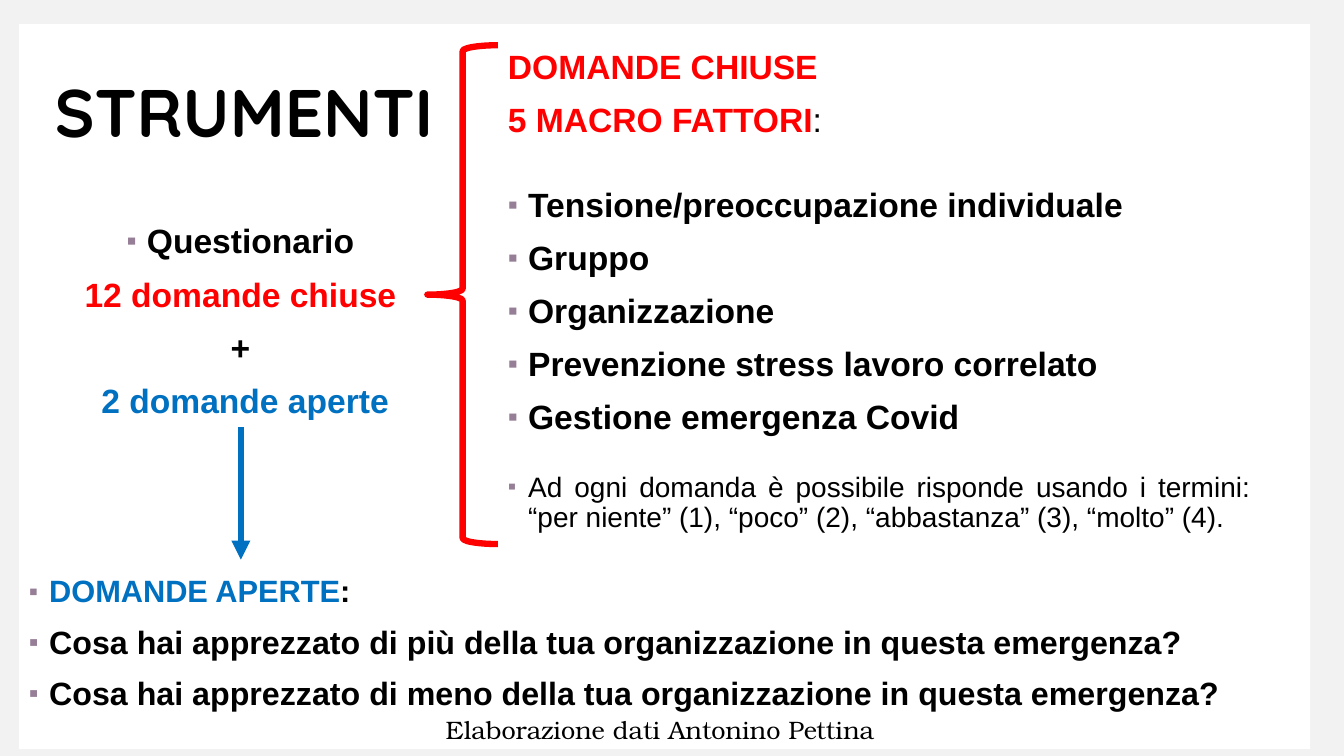
from lxml import etree
from pptx import Presentation
from pptx.dml.color import RGBColor
from pptx.enum.shapes import MSO_CONNECTOR, MSO_SHAPE
from pptx.enum.text import MSO_ANCHOR, MSO_AUTO_SIZE, PP_ALIGN
from pptx.oxml.ns import qn
from pptx.util import Cm, Pt

RECT, BRACE = MSO_SHAPE.RECTANGLE, MSO_SHAPE.LEFT_BRACE
LINE = MSO_CONNECTOR.STRAIGHT
TOP, MIDDLE = MSO_ANCHOR.TOP, MSO_ANCHOR.MIDDLE
LEFT, CENTER, JUSTIFY = PP_ALIGN.LEFT, PP_ALIGN.CENTER, PP_ALIGN.JUSTIFY
NO_FIT, GROW = MSO_AUTO_SIZE.NONE, MSO_AUTO_SIZE.SHAPE_TO_FIT_TEXT

BLACK, WHITE, GREY = "000000", "FFFFFF", "F2F2F2"
RED, BLUE, MAUVE = "FF0000", "0070C0", "967E96"


def rgb(code):
    return RGBColor.from_string(code)


class Deck:
    font = "Arial"
    thick = Pt(4.5)

    def __init__(self):
        self.prs = Presentation()
        self.prs.slide_width, self.prs.slide_height = Cm(33.87), Cm(19.05)
        self.slide = self.prs.slides.add_slide(self.prs.slide_layouts[5])
        self.shapes = self.slide.shapes
        back = self.slide.background.fill
        back.solid()
        back.fore_color.rgb = rgb(GREY)

    def style(self, run, size, color, bold=True, font=None):
        run.font.name = font or self.font
        run.font.size = Pt(size)
        run.font.bold = bold
        run.font.color.rgb = rgb(color)

    def title(self, text, *place):
        head = self.shapes.title
        head.left, head.top, head.width, head.height = map(Cm, place)
        frame = head.text_frame
        frame.text = text
        frame.auto_size = NO_FIT
        frame.vertical_anchor = MIDDLE
        par = frame.paragraphs[0]
        par.alignment, par.line_spacing = LEFT, 0.9
        self.style(par.runs[0], 48, BLACK, font="Quicksand")

    def box(self, *place, anchor=TOP):
        """Add a plain white panel."""
        shape = self.shapes.add_shape(RECT, *map(Cm, place))
        shape.shadow.inherit = False
        shape.fill.solid()
        shape.fill.fore_color.rgb = rgb(WHITE)
        shape.line.fill.background()
        shape.text_frame.vertical_anchor = anchor
        return shape

    def indent(self, par, left, hang=0):
        props = par._p.get_or_add_pPr()
        props.set("marL", str(Cm(left)))
        props.set("indent", str(Cm(-hang)))
        return props

    def bullet(self, par):
        props = self.indent(par, 0.51, 0.51)
        color = etree.SubElement(props, qn("a:buClr"))
        etree.SubElement(color, qn("a:srgbClr"), val=MAUVE)
        etree.SubElement(props, qn("a:buSzPct"), val="85000")
        etree.SubElement(props, qn("a:buFont"), typeface=self.font)
        etree.SubElement(props, qn("a:buChar"), char="▪")

    def para(self, shape, *runs, align=LEFT, mark=True, gap=12):
        """Add a paragraph; each run is (text, size, color[, bold])."""
        frame = shape.text_frame
        first = not frame.text
        par = frame.paragraphs[0] if first else frame.add_paragraph()
        if mark:
            self.bullet(par)
        par.alignment, par.line_spacing = align, 0.9
        par.space_before = Pt(0 if first else gap)
        for text, *look in runs:
            run = par.add_run()
            run.text = text
            self.style(run, *look)
        return par

    def brace(self, *place):
        shape = self.shapes.add_shape(BRACE, *map(Cm, place))
        shape.shadow.inherit = False
        shape.fill.background()
        shape.line.color.rgb = rgb(RED)
        shape.line.width = self.thick

    def arrow(self, *ends):
        link = self.shapes.add_connector(LINE, *map(Cm, ends))
        link.line.color.rgb = rgb(BLUE)
        link.line.width = self.thick
        etree.SubElement(link.line._get_or_add_ln(), qn("a:tailEnd"),
                         type="triangle")
        etree.SubElement(link._element.spPr, qn("a:effectLst"))

    def note(self, text, *place):
        frame = self.shapes.add_textbox(*map(Cm, place)).text_frame
        frame.word_wrap = True
        frame.auto_size = GROW
        frame.text = text
        par = frame.paragraphs[0]
        par.alignment = CENTER
        self.style(par.runs[0], 18, BLACK, False, "TeX Gyre Bonum")


def main():
    deck = Deck()
    panel = deck.box(0.48, 0.61, 32.54, 16.28)
    deck.shapes._spTree.insert(2, panel._element)
    deck.title("STRUMENTI", 1.12, 1.8, 27.94, 2.21)

    form = deck.box(0.79, 5.16, 10.54, 5.94, anchor=MIDDLE)
    deck.para(form, ("Questionario", 24, BLACK), align=CENTER)
    for text, color in (("12 domande chiuse", RED), ("+", BLACK),
                        ("2 domande aperte", BLUE)):
        last = deck.para(form, (text, 24, color), align=CENTER, mark=False)
    deck.indent(last, 0.24)

    closed = deck.box(12.55, 1.14, 19.84, 9.96)
    deck.para(closed, ("DOMANDE CHIUSE", 24, RED), mark=False)
    deck.para(closed, ("5 MACRO FATTORI", 24, RED), (":", 24, BLACK, False),
              mark=False)
    topics = ("Tensione/preoccupazione individuale", "Gruppo",
              "Organizzazione", "Prevenzione stress lavoro correlato",
              "Gestione emergenza Covid")
    for i, topic in enumerate(topics):
        deck.para(closed, (topic, 24, BLACK), gap=12 if i else 35)

    asked = deck.box(0.48, 14.4, 32.54, 4.47)
    deck.para(asked, ("DOMANDE APERTE", 22, BLUE), (":", 22, BLACK))
    for word in ("più", "meno"):
        deck.para(asked, (f"Cosa hai apprezzato di {word} della tua "
                          "organizzazione in questa emergenza?", 23, BLACK))

    scale = deck.box(12.55, 11.79, 20.47, 1.93)
    scale.text_frame.margin_right = Cm(1.5)
    deck.para(scale, ("Ad ogni domanda è possibile risponde usando i termini: "
                      "“per niente” (1), “poco” (2), “abbastanza” (3), "
                      "“molto” (4).", 20, BLACK, False), align=JUSTIFY)

    deck.brace(10.77, 1.14, 1.78, 12.57)
    deck.arrow(6.07, 10.77, 6.07, 14.1)
    deck.note("Elaborazione dati Antonino Pettina", 9.32, 17.88, 14.63, 1.02)
    deck.prs.save("out.pptx")


if __name__ == "__main__":
    main()
